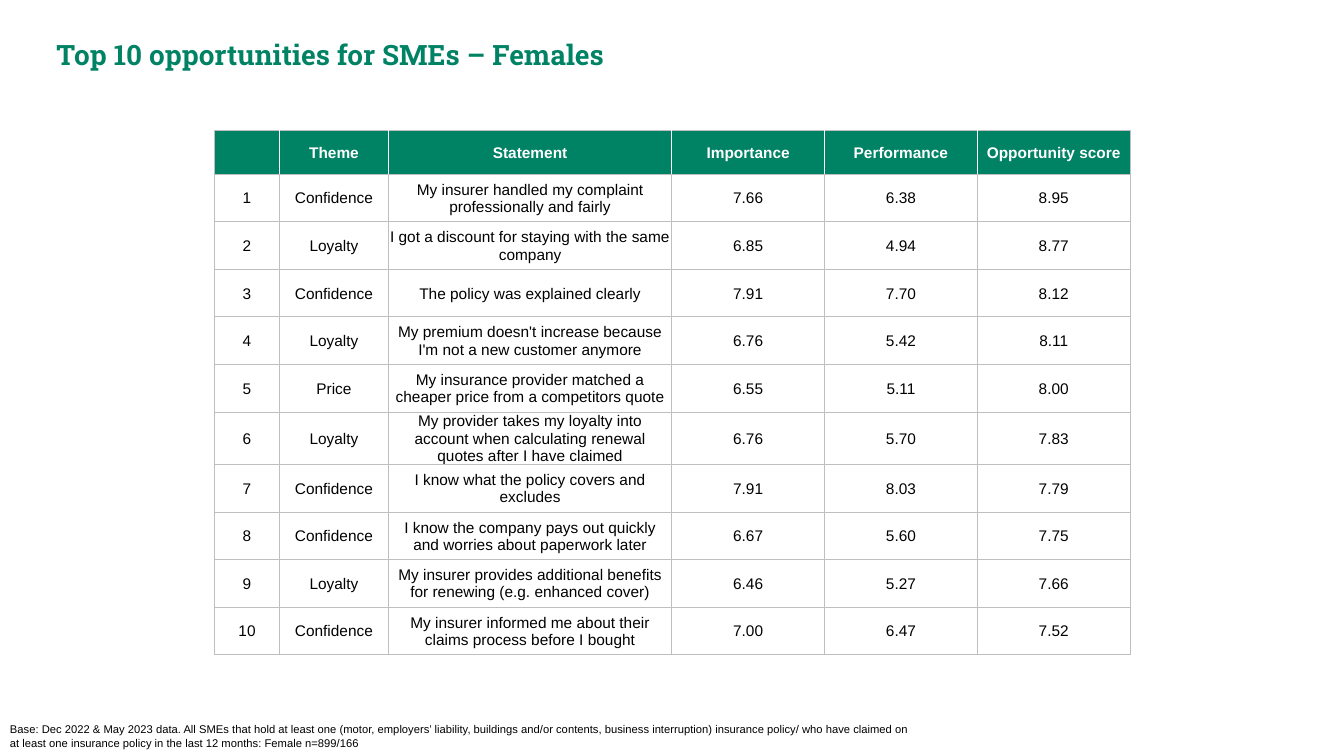
from dataclasses import astuple, dataclass

from lxml.etree import SubElement
from pptx import Presentation
from pptx.dml.color import RGBColor
from pptx.enum.text import MSO_ANCHOR, MSO_AUTO_SIZE, PP_ALIGN
from pptx.oxml.ns import qn
from pptx.util import Inches, Pt

GREEN, WHITE, BLACK, GREY = "008265", "FFFFFF", "000000", "BFBFBF"
WIDTH, HEIGHT = Inches(13.33), Inches(7.5)


@dataclass
class Box:
    """A place on the slide, in percent of its width and height."""
    left: float
    top: float
    width: float
    height: float

    def place(self) -> tuple:
        return wide(self.left), high(self.top), wide(self.width), high(self.height)


@dataclass
class Score:
    theme: str
    statement: str
    importance: str
    performance: str
    chance: str


def wide(share: float) -> int:
    return round(WIDTH * share / 100)


def high(share: float) -> int:
    return round(HEIGHT * share / 100)


def color(code: str) -> RGBColor:
    return RGBColor.from_string(code)


def write(frame, text: str, code: str, style: dict, align=PP_ALIGN.LEFT) -> None:
    para = frame.paragraphs[0]
    para.text = text
    para.alignment = align
    for font in (para.font, *(run.font for run in para.runs)):
        for name, value in style.items():
            setattr(font, name, value)
        font.color.rgb = color(code)


def edge(cell, side: str, code: str, width: float) -> None:
    line = SubElement(cell._tc.get_or_add_tcPr(), qn(f"a:ln{side}"), w=str(Pt(width)))
    fill = SubElement(line, qn("a:solidFill"))
    SubElement(fill, qn("a:srgbClr"), val=code)


TITLE = Box(3.45, 4.27, 92.12, 5.87)
TABLE = Box(15.96, 17.26, 68.14, 68.7)
NOTE = Box(0, 94.93, 69.24, 5.07)
COLS = [4.84, 8.11, 21.08, 11.37, 11.37, 11.37]
HEAD_ROW, BODY_ROW = 5.8, 6.29

TITLE_FONT = {"name": "Roboto Slab", "size": Pt(20), "bold": True}
HEAD_FONT = {"name": "Arial", "size": Pt(11), "bold": True}
BODY_FONT = {"name": "Arial", "size": Pt(11), "bold": False}
NOTE_FONT = {"name": "Arial", "size": Pt(8), "bold": False}
CELL = {
    "margin_left": Inches(0.01), "margin_top": Inches(0.01),
    "margin_right": Inches(0.01), "margin_bottom": 0,
    "vertical_anchor": MSO_ANCHOR.MIDDLE,
}

HEADS = ["", "Theme", "Statement", "Importance", "Performance", "Opportunity score"]
SCORES = [
    Score("Confidence", "My insurer handled my complaint professionally and fairly",
          "7.66", "6.38", "8.95"),
    Score("Loyalty", "I got a discount for staying with the same company",
          "6.85", "4.94", "8.77"),
    Score("Confidence", "The policy was explained clearly",
          "7.91", "7.70", "8.12"),
    Score("Loyalty", "My premium doesn't increase because I'm not a new customer anymore",
          "6.76", "5.42", "8.11"),
    Score("Price", "My insurance provider matched a cheaper price from a competitors quote",
          "6.55", "5.11", "8.00"),
    Score("Loyalty", "My provider takes my loyalty into account when calculating "
          "renewal quotes after I have claimed",
          "6.76", "5.70", "7.83"),
    Score("Confidence", "I know what the policy covers and excludes",
          "7.91", "8.03", "7.79"),
    Score("Confidence", "I know the company pays out quickly and worries about paperwork later",
          "6.67", "5.60", "7.75"),
    Score("Loyalty", "My insurer provides additional benefits for renewing (e.g. enhanced cover)",
          "6.46", "5.27", "7.66"),
    Score("Confidence", "My insurer informed me about their claims process before I bought",
          "7.00", "6.47", "7.52"),
]


def add_title(slide) -> None:
    title = slide.shapes.title
    title.left, title.top, title.width, title.height = TITLE.place()
    frame = title.text_frame
    frame.auto_size = MSO_AUTO_SIZE.NONE
    frame.vertical_anchor = MSO_ANCHOR.MIDDLE
    write(frame, "Top 10 opportunities for SMEs – Females", GREEN, TITLE_FONT)


def fill_cell(cell, text: str, head: bool, col: int) -> None:
    for name, value in CELL.items():
        setattr(cell, name, value)
    write(cell.text_frame, text, WHITE if head else BLACK,
          HEAD_FONT if head else BODY_FONT, PP_ALIGN.CENTER)
    # Borders come before the fill; inner header edges are white
    inner = {"L": head and col > 0, "R": head and col < len(COLS) - 1}
    for side in "LRTB":
        white = inner.get(side, False)
        edge(cell, side, WHITE if white else GREY, 1 if white else 0.75)
    if head:
        cell.fill.solid()
        cell.fill.fore_color.rgb = color(GREEN)
    else:
        cell.fill.background()


def add_scores(slide) -> None:
    rows = [HEADS] + [[str(rank), *astuple(score)] for rank, score in enumerate(SCORES, 1)]
    table = slide.shapes.add_table(len(rows), len(COLS), *TABLE.place()).table
    table.horz_banding = False
    for column, share in zip(table.columns, COLS):
        column.width = wide(share)
    for index, texts in enumerate(rows):
        head = index == 0
        table.rows[index].height = high(HEAD_ROW if head else BODY_ROW)
        for col, text in enumerate(texts):
            fill_cell(table.cell(index, col), text, head, col)


def add_note(slide) -> None:
    frame = slide.shapes.add_textbox(*NOTE.place()).text_frame
    frame.word_wrap = True
    write(frame, "Base: Dec 2022 & May 2023 data. All SMEs that hold at least one (motor, "
          "employers’ liability, buildings and/or contents, business interruption) insurance "
          "policy/ who have claimed on at least one insurance policy in the last 12 months: "
          "Female n=899/166", BLACK, NOTE_FONT)


def main() -> None:
    deck = Presentation()
    deck.slide_width, deck.slide_height = WIDTH, HEIGHT
    slide = deck.slides.add_slide(deck.slide_layouts[5])
    add_title(slide)
    add_scores(slide)
    add_note(slide)
    deck.save("out.pptx")


if __name__ == "__main__":
    main()
